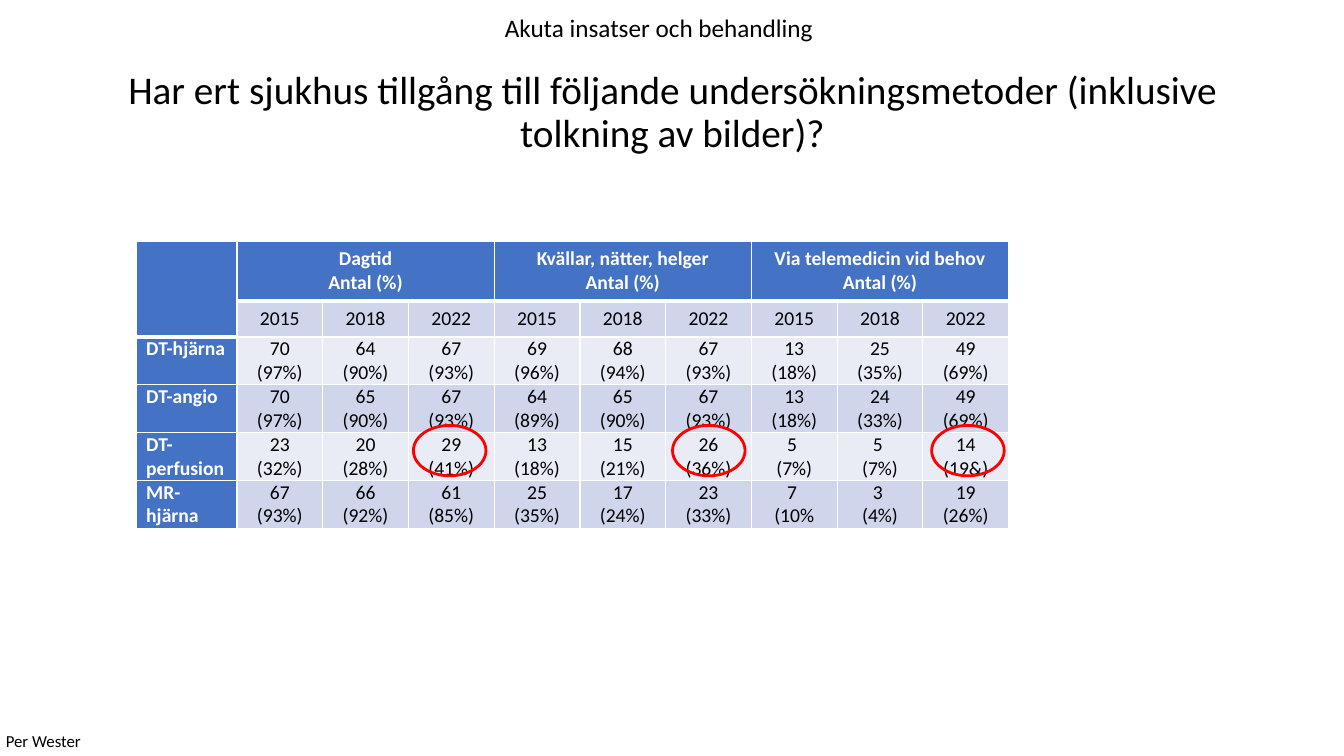
from lxml.etree import SubElement
from pptx import Presentation
from pptx.dml.color import RGBColor
from pptx.enum.shapes import MSO_SHAPE
from pptx.enum.text import MSO_ANCHOR, MSO_AUTO_SIZE, PP_ALIGN
from pptx.oxml.ns import qn
from pptx.util import Inches, Pt

WIDTH, HEIGHT = Inches(13.33), Inches(7.5)
LABEL_WIDTH, YEAR_WIDTH = 7.5, 6.38
ROW_HEIGHTS = [7.87, 4.8] + [6.33] * 4
PERIODS = ["Dagtid", "Kvällar, nätter, helger", "Via telemedicin vid behov"]
YEARS = ["2015", "2018", "2022"]
BLACK, WHITE, RED = "000000", "FFFFFF", "FF0000"
HEADER_BLUE, BANDS = "4472C4", ["CFD5EA", "E9EBF5"]
METHODS = {
    "DT-hjärna": ["70 (97%)", "64 (90%)", "67 (93%)", "69 (96%)", "68 (94%)",
                  "67 (93%)", "13 (18%)", "25 (35%)", "49 (69%)"],
    "DT-angio": ["70 (97%)", "65 (90%)", "67 (93%)", "64 (89%)", "65 (90%)",
                 "67 (93%)", "13 (18%)", "24 (33%)", "49 (69%)"],
    "DT-perfusion": ["23 (32%)", "20 (28%)", "29 (41%)", "13 (18%)", "15 (21%)",
                     "26 (36%)", "5 \v(7%)", "5 \v(7%)", "14 (19&)"],
    "MR-hjärna": ["67 (93%)", "66 (92%)", "61 (85%)", "25 (35%)", "17 (24%)",
                  "23 (33%)", "7 \v(10%", "3 \v(4%)", "19 (26%)"],
}


def color(value):
    """Turn a hex string into a colour."""
    return RGBColor.from_string(value)


def across(percent):
    """Give a share of the slide's width."""
    return round(WIDTH * percent / 100)


def down(percent):
    """Give a share of the slide's height."""
    return round(HEIGHT * percent / 100)


def area(left, top, width, height):
    """Give a box in percent of the slide as lengths."""
    return across(left), down(top), across(width), down(height)


def assign(target, formats):
    """Set attributes from a dict of format values."""
    for key, value in formats.items():
        setattr(target, key, value)


def write(frame, text, size, shade=BLACK, bold=False, align=PP_ALIGN.CENTER, spacing=None):
    """Fill a text frame and format every paragraph."""
    frame.text = text
    for paragraph in frame.paragraphs:
        assign(paragraph, {"alignment": align, "line_spacing": spacing})
        for font in [paragraph.font] + [run.font for run in paragraph.runs]:
            assign(font, {"name": "Calibri", "size": Pt(size), "bold": bold})
            font.color.rgb = color(shade)


def add_title(slide, text):
    """Move and format the title placeholder."""
    title = slide.shapes.title
    assign(title, dict(zip(("left", "top", "width", "height"), area(6.9, 5.33, 86.27, 19.33))))
    write(title.text_frame, text, 28, spacing=0.9)
    assign(title.text_frame, {"vertical_anchor": MSO_ANCHOR.MIDDLE, "word_wrap": True,
                              "auto_size": MSO_AUTO_SIZE.NONE})


def add_caption(slide, box, text, size, align, wrap):
    """Add a text box that grows with its text."""
    frame = slide.shapes.add_textbox(*area(*box)).text_frame
    assign(frame, {"word_wrap": wrap, "auto_size": MSO_AUTO_SIZE.SHAPE_TO_FIT_TEXT})
    write(frame, text, size, align=align)


def set_borders(cell, bottom):
    """Draw white cell borders, with a chosen weight below."""
    properties = cell._tc.get_or_add_tcPr()
    for place, (side, weight) in enumerate({"L": 1, "R": 1, "T": 1, "B": bottom}.items()):
        line = SubElement(properties, qn(f"a:ln{side}"), w=str(Pt(weight)))
        fill = SubElement(line, qn("a:solidFill"))
        SubElement(fill, qn("a:srgbClr"), val=WHITE)
        properties.insert(place, line)


def fill_cell(cell, text, row, column):
    """Write and format one cell according to its place in the table."""
    heading = row == 0 or column == 0
    label = column == 0 and row > 1
    side, edge = (0.13, 0.06) if row == 0 else (0.1, 0)
    write(cell.text_frame, text, 14, WHITE if heading else BLACK, heading,
          PP_ALIGN.LEFT if label else PP_ALIGN.CENTER)
    assign(cell, {"margin_left": Inches(side), "margin_right": Inches(side),
                  "margin_top": Inches(edge), "margin_bottom": Inches(edge),
                  "vertical_anchor": MSO_ANCHOR.MIDDLE if row < 2 else MSO_ANCHOR.TOP})
    cell.fill.solid()
    cell.fill.fore_color.rgb = color(HEADER_BLUE if heading else BANDS[(row + 1) % 2])
    set_borders(cell, 3 if row == 0 or (row == 1 and column == 0) else 1)


def add_survey_table(slide):
    """Add the table of methods by period and year."""
    headings = [""]
    for period in PERIODS:
        headings += [f"{period}\nAntal (%)", "", ""]
    content = [headings, [""] + YEARS * len(PERIODS)]
    content += [[method] + answers for method, answers in METHODS.items()]
    widths = [LABEL_WIDTH] + [YEAR_WIDTH] * len(YEARS) * len(PERIODS)
    box = area(10.13, 31.87, sum(widths), sum(ROW_HEIGHTS))
    survey = slide.shapes.add_table(len(content), len(widths), *box).table
    for column, width in zip(survey.columns, widths):
        column.width = across(width)
    for row, height in zip(survey.rows, ROW_HEIGHTS):
        row.height = down(height)
    for row, texts in enumerate(content):
        for column, text in enumerate(texts):
            fill_cell(survey.cell(row, column), text, row, column)
    survey.cell(0, 0).merge(survey.cell(1, 0))
    for first in range(1, len(widths), len(YEARS)):
        survey.cell(0, first).merge(survey.cell(0, first + len(YEARS) - 1))


def add_highlight(slide, period):
    """Ring the latest perfusion answer of one period."""
    ring = slide.shapes.add_shape(MSO_SHAPE.OVAL, *area(30.76 + 19.28 * period, 56.27, 5.4, 6.67))
    ring.shadow.inherit = False
    ring.fill.background()
    ring.line.color.rgb = color(RED)
    ring.line.width = Pt(2)


def main():
    """Build and save the slide."""
    deck = Presentation()
    assign(deck, {"slide_width": WIDTH, "slide_height": HEIGHT})
    slide = deck.slides.add_slide(deck.slide_layouts[5])
    add_title(slide, "Har ert sjukhus tillgång till följande undersökningsmetoder "
                     "(inklusive tolkning av bilder)?")
    add_survey_table(slide)
    for period in range(len(PERIODS)):
        add_highlight(slide, period)
    add_caption(slide, (24, 0.93, 50.04, 5.33), "Akuta insatser och behandling",
                18, PP_ALIGN.CENTER, True)
    add_caption(slide, (-0.3, 96, 7.13, 4), "Per Wester", 12, PP_ALIGN.LEFT, False)
    deck.save("out.pptx")


if __name__ == "__main__":
    main()
